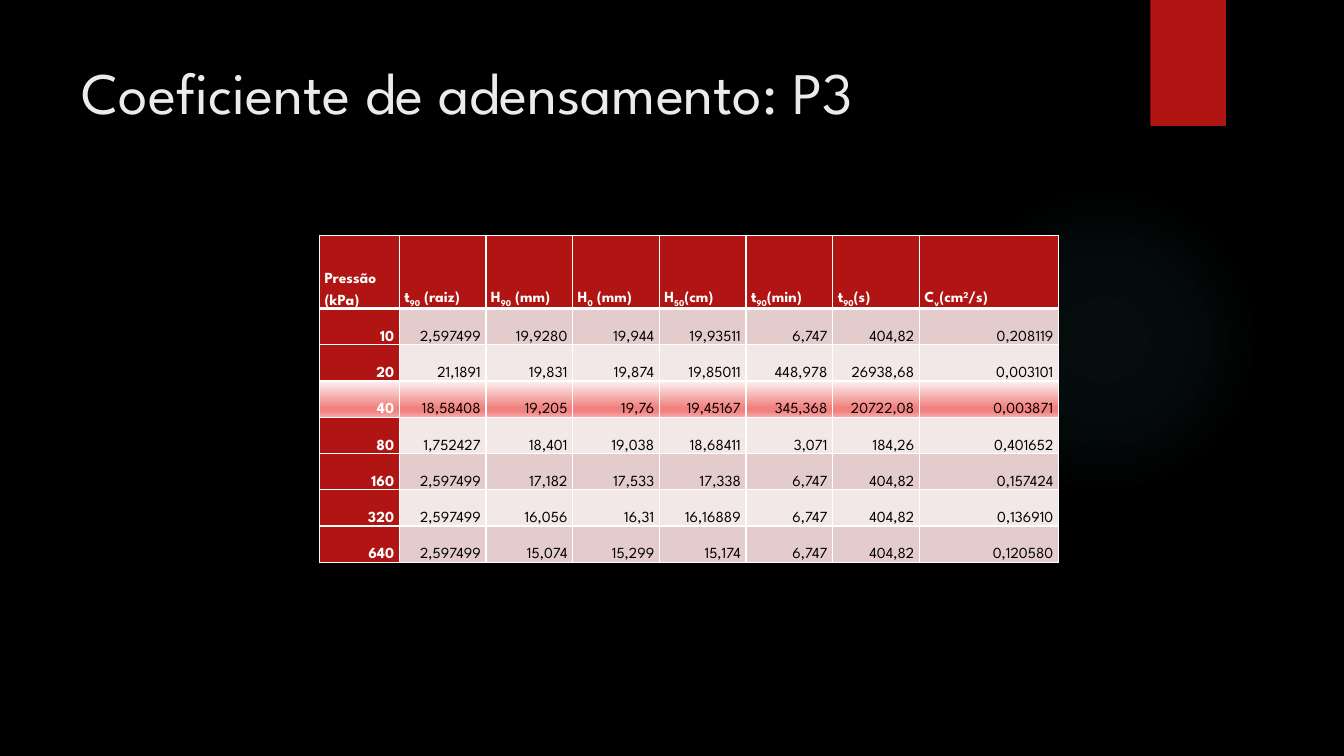
from dataclasses import dataclass

from lxml import etree
from pptx import Presentation
from pptx.dml.color import RGBColor
from pptx.enum.shapes import MSO_SHAPE
from pptx.enum.text import MSO_ANCHOR, PP_ALIGN
from pptx.oxml.ns import qn
from pptx.util import Inches, Pt

OVAL, RECTANGLE = MSO_SHAPE.OVAL, MSO_SHAPE.RECTANGLE
TOP, BOTTOM = MSO_ANCHOR.TOP, MSO_ANCHOR.BOTTOM
LEFT, RIGHT = PP_ALIGN.LEFT, PP_ALIGN.RIGHT

BLACK = RGBColor(0x00, 0x00, 0x00)
WHITE = RGBColor(0xFF, 0xFF, 0xFF)
TITLE_GREY = RGBColor(0xEB, 0xEB, 0xEB)
RED = RGBColor(0xB0, 0x15, 0x13)
BAND_DARK = RGBColor(0xE4, 0xCC, 0xCC)
BAND_LIGHT = RGBColor(0xF2, 0xE8, 0xE7)
TEAL = RGBColor(0x50, 0xB9, 0xC1)
PALE_ROSE = RGBColor(0xFD, 0xF1, 0xF1)
ROSE = RGBColor(0xF1, 0x81, 0x7F)
SOFT_ROSE = RGBColor(0xF6, 0xAB, 0xAA)
FONT = "League Spartan"


@dataclass(frozen=True)
class Span:
    text: str
    baseline: int = 0


@dataclass(frozen=True)
class Stop:
    position: int
    color: RGBColor
    opacity: int = 100


GLOW_STOPS = [Stop(0, TEAL, 7), Stop(36, TEAL, 6), Stop(69, TEAL, 0)]
HIGHLIGHT_STOPS = [Stop(0, PALE_ROSE), Stop(74, ROSE), Stop(83, ROSE), Stop(100, SOFT_ROSE)]

HEADINGS = [
    [Span("Pressão (kPa)")],
    [Span("t"), Span("90", -25), Span(" (raiz)")],
    [Span("H"), Span("90", -25), Span(" (mm)")],
    [Span("H"), Span("0", -25), Span(" (mm)")],
    [Span("H"), Span("50", -25), Span("(cm)")],
    [Span("t"), Span("90", -25), Span("(min)")],
    [Span("t"), Span("90", -25), Span("(s)")],
    [Span("C"), Span("v", -25), Span("(cm"), Span("2", 30), Span("/s)")],
]
MEASUREMENTS = [
    ["10", "2,597499", "19,9280", "19,944", "19,93511", "6,747", "404,82", "0,208119"],
    ["20", "21,1891", "19,831", "19,874", "19,85011", "448,978", "26938,68", "0,003101"],
    ["40", "18,58408", "19,205", "19,76", "19,45167", "345,368", "20722,08", "0,003871"],
    ["80", "1,752427", "18,401", "19,038", "18,68411", "3,071", "184,26", "0,401652"],
    ["160", "2,597499", "17,182", "17,533", "17,338", "6,747", "404,82", "0,157424"],
    ["320", "2,597499", "16,056", "16,31", "16,16889", "6,747", "404,82", "0,136910"],
    ["640", "2,597499", "15,074", "15,299", "15,174", "6,747", "404,82", "0,120580"],
]
HIGHLIGHTED_PRESSURE = "40"
COLUMN_WIDTHS = [0.79] + [0.86] * 6 + [1.38]
HEADER_HEIGHT, ROW_HEIGHT = 0.72, 0.36


def write_text(frame, spans: list[Span], *, size: float, color: RGBColor,
               bold: bool = False, align=LEFT, spacing: float = 1.0) -> None:
    paragraph = frame.paragraphs[0]
    paragraph.alignment = align
    paragraph.line_spacing = spacing
    for span in spans:
        run = paragraph.add_run()
        run.text = span.text
        run.font.name = FONT
        run.font.size = Pt(size)
        run.font.bold = bold
        run.font.color.rgb = color
        if span.baseline:
            run.font._element.set("baseline", str(span.baseline * 1000))


def add_color(parent, color: RGBColor, opacity: int = 100) -> None:
    value = etree.SubElement(parent, qn("a:srgbClr"), val=str(color))
    if opacity < 100:
        etree.SubElement(value, qn("a:alpha"), val=str(opacity * 1000))


def paint_gradient(fill, properties, stops: list[Stop], *, radial: bool = False) -> None:
    fill.gradient()
    gradient = properties.find(qn("a:gradFill"))
    for child in list(gradient):
        gradient.remove(child)
    stop_list = etree.SubElement(gradient, qn("a:gsLst"))
    for stop in stops:
        mark = etree.SubElement(stop_list, qn("a:gs"), pos=str(stop.position * 1000))
        add_color(mark, stop.color, stop.opacity)
    if radial:
        shade = etree.SubElement(gradient, qn("a:path"), path="circle")
        etree.SubElement(shade, qn("a:fillToRect"), {side: "50000" for side in "ltrb"})
    else:
        etree.SubElement(gradient, qn("a:lin"), ang="5400000", scaled="0")


def add_decoration(slide, kind, left: float, top: float, width: float, height: float):
    shape = slide.shapes.add_shape(kind, Inches(left), Inches(top), Inches(width), Inches(height))
    shape.shadow.inherit = False
    shape.line.fill.background()
    return shape


def draw_borders(properties, top: float, bottom: float) -> None:
    for side, width in (("L", 1), ("R", 1), ("T", top), ("B", bottom)):
        line = etree.SubElement(properties, qn(f"a:ln{side}"), w=str(Pt(width)))
        add_color(etree.SubElement(line, qn("a:solidFill")), WHITE)


def format_cell(cell, spans: list[Span], row: int, column: int) -> None:
    header = row == 0
    emphasized = header or column == 0
    cell.margin_left = cell.margin_right = Inches(0.05)
    cell.margin_top = cell.margin_bottom = 0
    cell.vertical_anchor = BOTTOM
    write_text(cell.text_frame, spans, size=11, color=WHITE if emphasized else BLACK,
               bold=emphasized, align=LEFT if header else RIGHT, spacing=1.5)
    properties = cell._tc.get_or_add_tcPr()
    draw_borders(properties, top=3 if row == 1 else 1, bottom=3 if header else 1)
    if not header and MEASUREMENTS[row - 1][0] == HIGHLIGHTED_PRESSURE:
        paint_gradient(cell.fill, properties, HIGHLIGHT_STOPS)
    else:
        band = BAND_DARK if row % 2 else BAND_LIGHT
        cell.fill.solid()
        cell.fill.fore_color.rgb = RED if emphasized else band


def add_consolidation_table(slide) -> None:
    rows = [HEADINGS] + [[[Span(value)] for value in values] for values in MEASUREMENTS]
    table = slide.shapes.add_table(
        len(rows), len(COLUMN_WIDTHS), Inches(3.17), Inches(2.34),
        Inches(sum(COLUMN_WIDTHS)), Inches(HEADER_HEIGHT + ROW_HEIGHT * len(MEASUREMENTS)),
    ).table
    table.first_col = True
    for column, width in zip(table.columns, COLUMN_WIDTHS):
        column.width = Inches(width)
    for row, entries in enumerate(rows):
        table.rows[row].height = Inches(ROW_HEIGHT if row else HEADER_HEIGHT)
        for column, spans in enumerate(entries):
            format_cell(table.cell(row, column), spans, row, column)


def main() -> None:
    presentation = Presentation()
    presentation.slide_width = Inches(13.33)
    presentation.slide_height = Inches(7.5)
    slide = presentation.slides.add_slide(presentation.slide_layouts[5])
    slide.background.fill.solid()
    slide.background.fill.fore_color.rgb = BLACK

    glow = add_decoration(slide, OVAL, 9.41, 1.83, 3.08, 3.08)
    paint_gradient(glow.fill, glow._element.spPr, GLOW_STOPS, radial=True)
    ribbon = add_decoration(slide, RECTANGLE, 11.41, 0, 0.75, 1.25)
    ribbon.fill.solid()
    ribbon.fill.fore_color.rgb = RED

    title = slide.shapes.title
    title.left, title.top = Inches(0.71), Inches(0.5)
    title.width, title.height = Inches(10.29), Inches(1.53)
    title.text_frame.vertical_anchor = TOP
    write_text(title.text_frame, [Span("Coeficiente de adensamento: P3")],
               size=42, color=TITLE_GREY)

    add_consolidation_table(slide)
    presentation.save("out.pptx")


if __name__ == "__main__":
    main()
